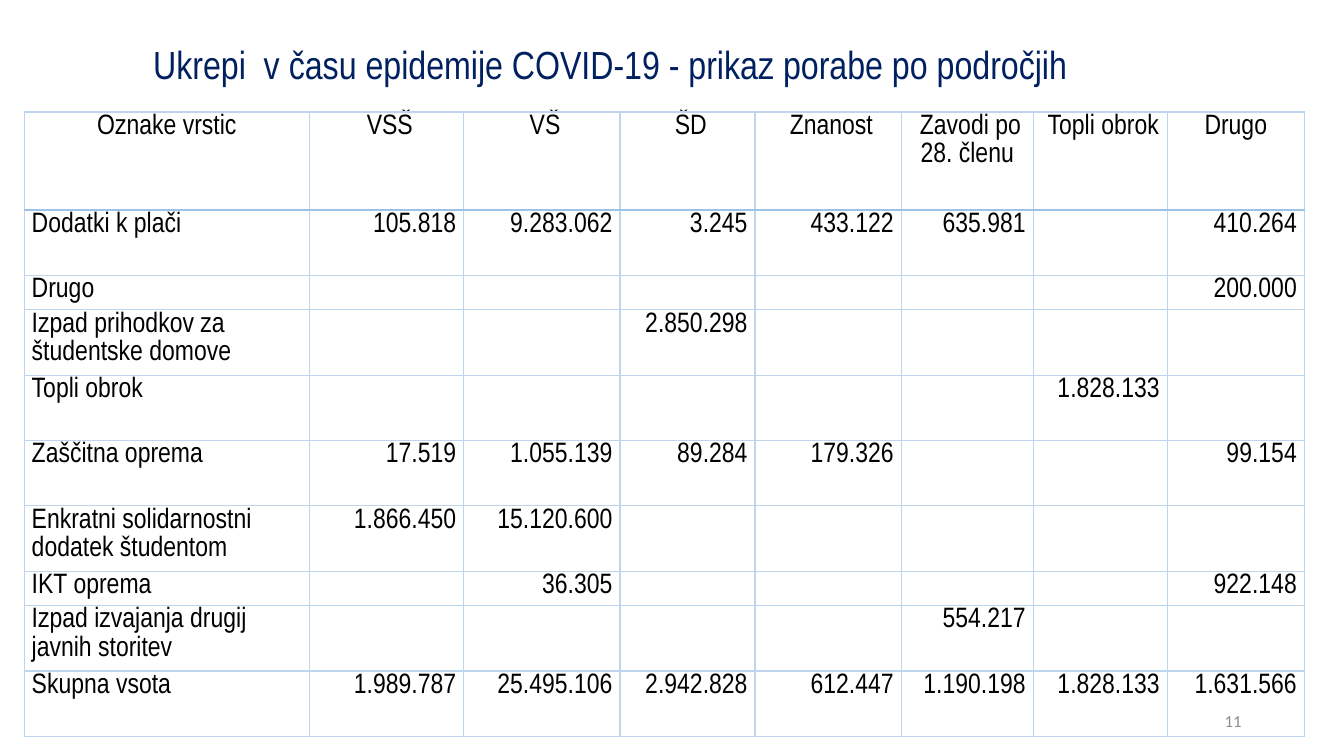
from lxml.etree import SubElement
from pptx import Presentation
from pptx.dml.color import RGBColor
from pptx.enum.text import MSO_ANCHOR as Anchor, MSO_AUTO_SIZE as AutoSize, PP_ALIGN as Align
from pptx.oxml.ns import qn
from pptx.util import Pt

COLORS = {"title": "002060", "text": "000000", "number": "8C8C8C",
          "grid": "BDD6EE", "header_rule": "9CC2E5"}
COLUMN_WIDTHS = [203.8, 110.2, 111.6, 96.5, 104.4, 94.3, 95.8, 97.9]
HEADER_HEIGHT, TALL_ROW, SHORT_ROW = 70, 46.7, 24.6
SHORT_LABELS = {"Drugo", "IKT oprema"}
HEADER = ["Oznake vrstic", " VSŠ", " VŠ", " ŠD", " Znanost",
          " Zavodi po 28. členu", " Topli obrok", "Drugo"]
SPENDING = [
    ["Dodatki k plači", "105.818", "9.283.062", "3.245", "433.122", "635.981", "", "410.264"],
    ["Drugo", "", "", "", "", "", "", "200.000"],
    ["Izpad prihodkov za študentske domove", "", "", "2.850.298", "", "", "", ""],
    ["Topli obrok", "", "", "", "", "", "1.828.133", ""],
    ["Zaščitna oprema", "17.519", "1.055.139", "89.284", "179.326", "", "", "99.154"],
    ["Enkratni solidarnostni dodatek študentom", "1.866.450", "15.120.600", "", "", "", "", ""],
    ["IKT oprema", "", "36.305", "", "", "", "", "922.148"],
    ["Izpad izvajanja drugij javnih storitev", "", "", "", "", "554.217", "", ""],
    ["Skupna vsota", "1.989.787", "25.495.106", "2.942.828", "612.447", "1.190.198",
     "1.828.133", "1.631.566"],
]


class SlideBuilder:
    """Holds the style and the current slide, and adds each kind of element."""

    def __init__(self, presentation):
        self.font = "Arial Narrow"
        self.slide = presentation.slides.add_slide(presentation.slide_layouts[5])

    def add_text(self, frame, text, size, color, align, spacing=1.0, font=None):
        paragraph = frame.paragraphs[0]
        paragraph.alignment = align
        paragraph.line_spacing = spacing
        run = paragraph.add_run()
        run.text = text
        run.font.size = Pt(size)
        run.font.name = font or self.font
        run.font.color.rgb = RGBColor.from_string(COLORS[color])

    def place(self, shape, left, top, width, height):
        shape.left, shape.top = Pt(left), Pt(top)
        shape.width, shape.height = Pt(width), Pt(height)
        frame = shape.text_frame
        frame.word_wrap = True
        frame.auto_size = AutoSize.NONE
        frame.vertical_anchor = Anchor.MIDDLE
        return frame

    def title(self, text, *box):
        frame = self.place(self.slide.shapes.title, *box)
        self.add_text(frame, text, 28, "title", Align.LEFT, 0.9)

    def page_number(self, text, *box):
        shape = self.slide.shapes.add_textbox(0, 0, 0, 0)
        self.add_text(self.place(shape, *box), text, 12, "number", Align.RIGHT, font="Calibri")

    def border(self, cell, side, color, width):
        line = SubElement(cell._tc.get_or_add_tcPr(), qn(f"a:{side}"), w=str(Pt(width)))
        fill = SubElement(line, qn("a:solidFill"))
        SubElement(fill, qn("a:srgbClr"), val=COLORS[color])

    def cell(self, cell, text, row, column):
        cell.margin_left = cell.margin_right = Pt(5.4)
        cell.margin_top = cell.margin_bottom = 0
        for side in ("lnL", "lnR", "lnT", "lnB"):
            under_header = (row, side) in ((0, "lnB"), (1, "lnT"))
            self.border(cell, side, *(("header_rule", 1.5) if under_header else ("grid", 1)))
        cell.fill.background()
        if text:
            align = Align.CENTER if row == 0 else Align.RIGHT if column else Align.LEFT
            self.add_text(cell.text_frame, text, 20, "text", align, 1.07)

    def table(self, rows, left, top):
        heights = [HEADER_HEIGHT] + [SHORT_ROW if row[0] in SHORT_LABELS else TALL_ROW
                                     for row in rows[1:]]
        table = self.slide.shapes.add_table(
            len(rows), len(COLUMN_WIDTHS), Pt(left), Pt(top),
            Pt(sum(COLUMN_WIDTHS)), Pt(sum(heights))).table
        table.first_row = table.horz_banding = False
        for column, width in zip(table.columns, COLUMN_WIDTHS):
            column.width = Pt(width)
        for row, (texts, height) in enumerate(zip(rows, heights)):
            table.rows[row].height = Pt(height)
            for column, text in enumerate(texts):
                self.cell(table.cell(row, column), text, row, column)


def main():
    presentation = Presentation()
    presentation.slide_width, presentation.slide_height = Pt(960), Pt(540)
    builder = SlideBuilder(presentation)
    builder.title("Ukrepi  v času epidemije COVID-19 - prikaz porabe po področjih",
                  102.2, 15.8, 702, 64)
    builder.table([HEADER] + SPENDING, 17.3, 80)
    builder.page_number("11", 678, 500.5, 216, 28.8)
    presentation.save("out.pptx")


if __name__ == "__main__":
    main()
